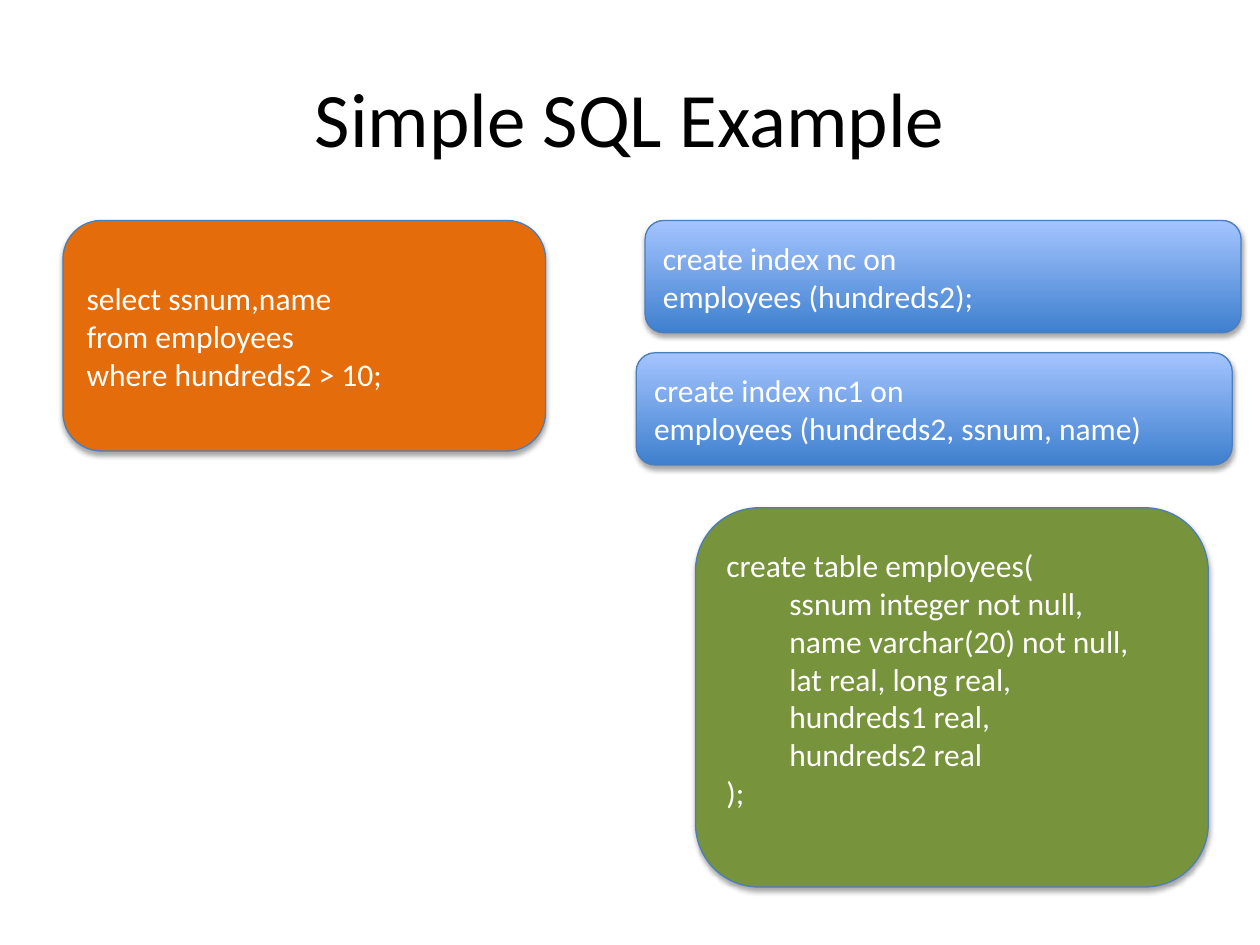
from dataclasses import dataclass

from lxml import etree
from pptx import Presentation
from pptx.dml.color import RGBColor
from pptx.enum.shapes import MSO_SHAPE
from pptx.enum.text import MSO_ANCHOR, PP_ALIGN
from pptx.oxml.ns import qn
from pptx.util import Inches, Pt

ROUNDED = MSO_SHAPE.ROUNDED_RECTANGLE
MIDDLE = MSO_ANCHOR.MIDDLE
LEFT, CENTER = PP_ALIGN.LEFT, PP_ALIGN.CENTER
TITLE_ONLY = 5


@dataclass(frozen=True)
class Theme:
    """Colours, font and sizes of the slide."""
    font: str = "Calibri"
    title_size: int = 44
    code_size: int = 18
    title: str = "000000"
    code: str = "FFFFFF"
    outline: str = "4B7EBC"
    query: tuple = ("E46C0A",)
    index: tuple = ("3F80CE", "A4C4FF")
    table: tuple = ("77933C",)
    shadow: str = "000000"


THEME = Theme()


def set_attributes(target, values):
    """Set each named attribute on the target."""
    for name, value in values.items():
        setattr(target, name, value)


def place(shape, box):
    """Move and size a shape to a box in inches."""
    names = ("left", "top", "width", "height")
    set_attributes(shape, dict(zip(names, map(Inches, box))))


def format_text(paragraph, size, color, alignment):
    """Give a paragraph its font, size, colour and alignment."""
    paragraph.alignment = alignment
    for run in paragraph.runs:
        set_attributes(run.font, {"name": THEME.font, "size": Pt(size)})
        run.font.color.rgb = RGBColor.from_string(color)


def paint(shape, colors):
    """Fill a shape with one colour or an upward gradient."""
    if len(colors) == 1:
        shape.fill.solid()
        shape.fill.fore_color.rgb = RGBColor.from_string(colors[0])
        return
    shape.fill.gradient()
    shape.fill.gradient_angle = 90
    for stop, color in zip(shape.fill.gradient_stops, colors):
        stop.color.rgb = RGBColor.from_string(color)


def add_shadow(shape):
    """Cast a soft shadow straight below a shape."""
    shape.shadow.inherit = False
    effects = shape.element.spPr.find(qn("a:effectLst"))
    shadow = etree.SubElement(
        effects, qn("a:outerShdw"), blurRad=str(Pt(3.1)), dist=str(Pt(1.8)),
        dir="5400000", rotWithShape="0")
    color = etree.SubElement(shadow, qn("a:srgbClr"), val=THEME.shadow)
    etree.SubElement(color, qn("a:alpha"), val="35000")


def add_title(slide, box, text):
    """Place the centred slide title."""
    title = slide.shapes.title
    place(title, box)
    title.text_frame.text = text
    title.text_frame.vertical_anchor = MIDDLE
    format_text(title.text_frame.paragraphs[0], THEME.title_size, THEME.title, CENTER)


def add_code_card(slide, box, colors, lines, indented=(), bottom=0.05):
    """Add a rounded card of code, with some lines indented."""
    card = slide.shapes.add_shape(ROUNDED, *map(Inches, box))
    paint(card, colors)
    card.line.color.rgb = RGBColor.from_string(THEME.outline)
    card.line.width = Pt(0.75)
    add_shadow(card)
    frame = card.text_frame
    set_attributes(frame, {"word_wrap": True, "vertical_anchor": MIDDLE,
                           "margin_bottom": Inches(bottom)})
    frame.text = "\n".join(lines)
    for number, paragraph in enumerate(frame.paragraphs):
        format_text(paragraph, THEME.code_size, THEME.code, LEFT)
        if number in indented:
            paragraph._p.get_or_add_pPr().set("marL", str(Inches(0.5)))


def main():
    """Build the SQL example slide."""
    presentation = Presentation()
    set_attributes(presentation, {"slide_width": Inches(10), "slide_height": Inches(7.5)})
    slide = presentation.slides.add_slide(presentation.slide_layouts[TITLE_ONLY])
    add_title(slide, (0.5, 0.3, 9, 1.25), "Simple SQL Example")
    add_code_card(slide, (5.12, 1.75, 4.73, 0.89), THEME.index,
                  ["create index nc on", "employees (hundreds2);"])
    add_code_card(slide, (5.52, 4.03, 4.07, 3.01), THEME.table,
                  ["create table employees(", "ssnum integer not null,",
                   "name varchar(20) not null,", "lat real, long real,",
                   "hundreds1 real,", "hundreds2 real", ");"],
                  indented=range(1, 6), bottom=0.35)
    add_code_card(slide, (5.05, 2.8, 4.73, 0.89), THEME.index,
                  ["create index nc1 on", "employees (hundreds2, ssnum, name)"])
    add_code_card(slide, (0.5, 1.75, 3.83, 1.83), THEME.query,
                  ["select ssnum,name", "from employees", "where hundreds2 > 10;"])
    presentation.save("out.pptx")


if __name__ == "__main__":
    main()
